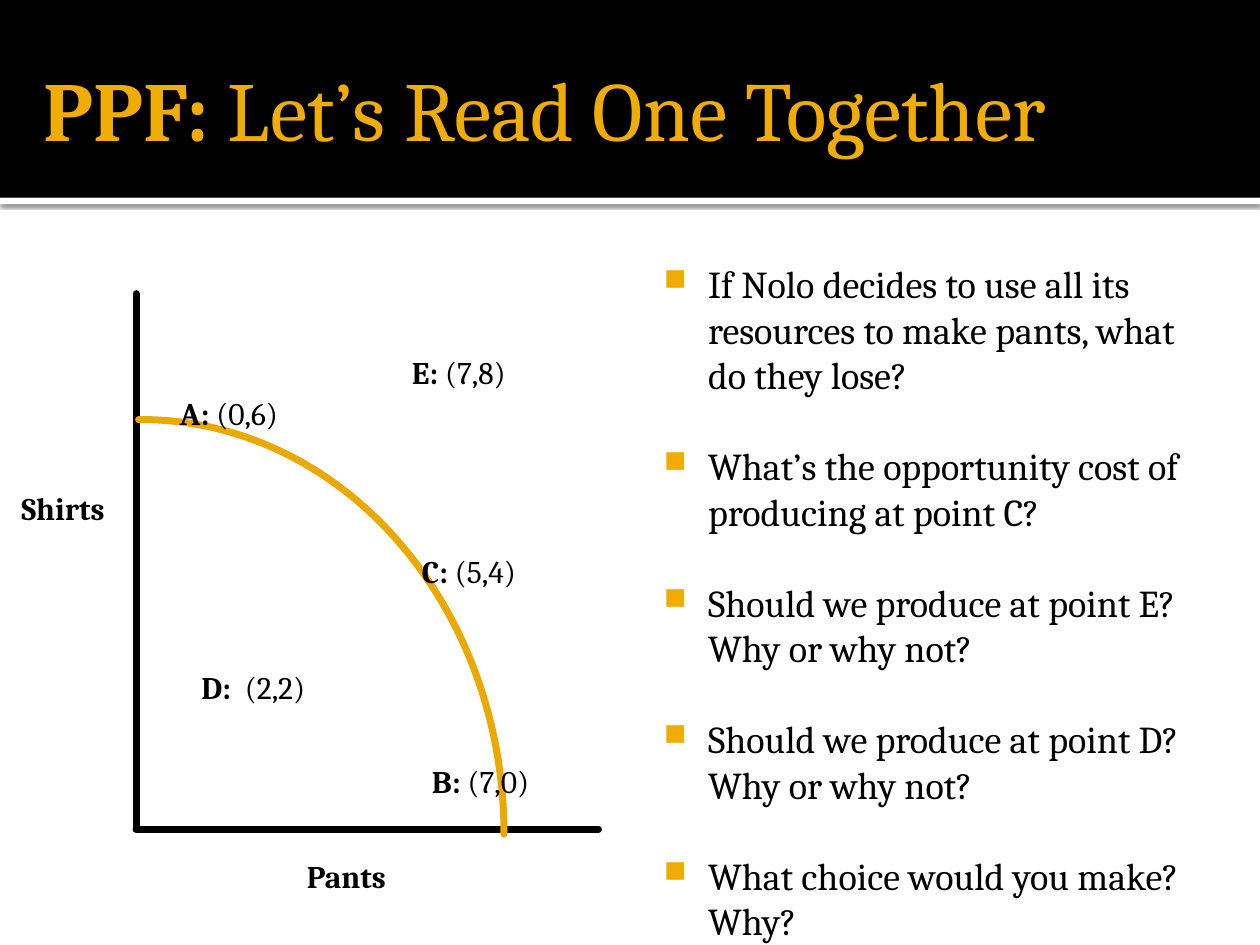
from lxml.etree import SubElement
from pptx import Presentation
from pptx.dml.color import RGBColor
from pptx.enum.shapes import MSO_CONNECTOR as Connector, MSO_SHAPE as Shape
from pptx.enum.text import MSO_ANCHOR as Anchor, MSO_AUTO_SIZE as AutoSize, PP_ALIGN as Align
from pptx.oxml.ns import qn
from pptx.util import Inches, Pt

COLORS = {"black": "000000", "white": "FFFFFF", "gold": "F0AD00", "curve": "EBA900"}
FONT = "Cambria"


class SlideBuilder:
    """Draws styled elements on the current slide."""

    def __init__(self, slide):
        self.slide = slide
        self.shapes = slide.shapes

    def color(self, name):
        return RGBColor.from_string(COLORS[name])

    def band(self, top, height, fill):
        band = self.shapes.add_shape(Shape.RECTANGLE, 0, Inches(top), Inches(10), Inches(height))
        band.shadow.inherit = False
        band.fill.solid()
        band.fill.fore_color.rgb = self.color(fill)
        band.line.fill.background()
        return band

    def drop_shadow(self, shape):
        effects = shape._element.spPr.find(qn("a:effectLst"))
        shadow = SubElement(effects, qn("a:outerShdw"), blurRad=str(Pt(2.5)),
                            dist=str(Pt(0.8)), dir="5400000", algn="tl", rotWithShape="0")
        tint = SubElement(shadow, qn("a:srgbClr"), val=COLORS["black"])
        SubElement(tint, qn("a:alpha"), val="60000")

    def stroke(self, shape, color):
        shape.line.color.rgb = self.color(color)
        shape.line.width = Pt(4)
        outline = shape.line._get_or_add_ln()
        outline.set("cap", "rnd")
        SubElement(outline, qn("a:round"))

    def axis(self, start, end):
        axis = self.shapes.add_connector(Connector.STRAIGHT, *map(Inches, start + end))
        self.stroke(axis, "black")
        SubElement(axis._element.spPr, qn("a:effectLst"))

    def curve(self, box, start_angle):
        curve = self.shapes.add_shape(Shape.ARC, *map(Inches, box))
        curve.adjustments[0] = start_angle
        curve.adjustments[1] = 0
        curve.shadow.inherit = False
        curve.fill.background()
        self.stroke(curve, "curve")

    def text_frame(self, box, insets=(0.1, 0.05, 0.1, 0.05)):
        frame = self.shapes.add_textbox(*map(Inches, box)).text_frame
        frame.word_wrap = True
        (frame.margin_left, frame.margin_top,
         frame.margin_right, frame.margin_bottom) = map(Inches, insets)
        return frame

    def run(self, paragraph, text, size, color="black", bold=False):
        run = paragraph.add_run()
        run.text = text
        run.font.name = FONT
        run.font.size = Pt(size)
        run.font.bold = bold
        run.font.color.rgb = self.color(color)

    def title(self, box, lead, rest):
        frame = self.text_frame(box, (0.1, 0.05, 0.05, 0.05))
        frame.vertical_anchor = Anchor.MIDDLE
        self.run(frame.paragraphs[0], lead, 48, "gold", True)
        self.run(frame.paragraphs[0], rest, 48, "gold")

    def label(self, box, lead, rest="", align=Align.LEFT):
        frame = self.text_frame(box)
        frame.auto_size = AutoSize.SHAPE_TO_FIT_TEXT
        paragraph = frame.paragraphs[0]
        paragraph.alignment = align
        self.run(paragraph, lead, 18, bold=True)
        if rest:
            self.run(paragraph, rest, 18)

    def bullets(self, box, items):
        frame = self.text_frame(box, (0.06, 0.13, 0.1, 0.05))
        for index, item in enumerate(items):
            paragraph = frame.add_paragraph() if index else frame.paragraphs[0]
            paragraph.line_spacing = Pt(26)
            paragraph.space_before = Pt(26 if index else 0)
            props = paragraph._p.get_or_add_pPr()
            props.set("marL", str(Inches(0.48)))
            props.set("indent", str(Inches(-0.35)))
            bullet_color = SubElement(props, qn("a:buClr"))
            SubElement(bullet_color, qn("a:srgbClr"), val=COLORS["gold"])
            SubElement(props, qn("a:buSzPct"), val="80000")
            SubElement(props, qn("a:buChar"), char="■")
            self.run(paragraph, item, 21.7)


def main():
    deck = Presentation()
    deck.slide_width, deck.slide_height = Inches(10), Inches(7.5)
    builder = SlideBuilder(deck.slides.add_slide(deck.slide_layouts[6]))

    builder.drop_shadow(builder.band(1.57, 0.05, "white"))
    builder.band(0, 1.57, "black")
    builder.title((0.25, 0.17, 9.58, 1.37), "PPF:", " Let’s Read One Together")

    builder.bullets((5.08, 1.94, 4.42, 5.06), [
        "If Nolo decides to use all its resources to make pants, what do they lose?",
        "What’s the opportunity cost of producing at point C?",
        "Should we produce at point E? Why or why not?",
        "Should we produce at point D? Why or why not?",
        "What choice would you make? Why?",
    ])

    origin = (1.08, 6.58)
    builder.axis((1.08, 2.33), origin)
    builder.axis(origin, (4.75, 6.58))
    builder.label((2, 6.75, 1.5, 0.4), "Pants", align=Align.CENTER)
    builder.label((0, 3.83, 1, 0.4), "Shirts", align=Align.CENTER)
    builder.curve((-1.75, 3.33, 5.75, 6.58), 161.74)

    points = [
        ("B: ", "(7,0)", 3.33, 6, 1.17),
        ("E: ", "(7,8)", 3.17, 2.75, 1.42),
        ("D: ", " (2,2)", 1.5, 5.25, 1.5),
        ("A: ", "(0,6)", 1.33, 3.08, 1.42),
        ("C: ", "(5,4)", 3.25, 4.33, 1.5),
    ]
    for name, position, left, top, width in points:
        builder.label((left, top, width, 0.4), name, position)

    deck.save("out.pptx")


if __name__ == "__main__":
    main()
